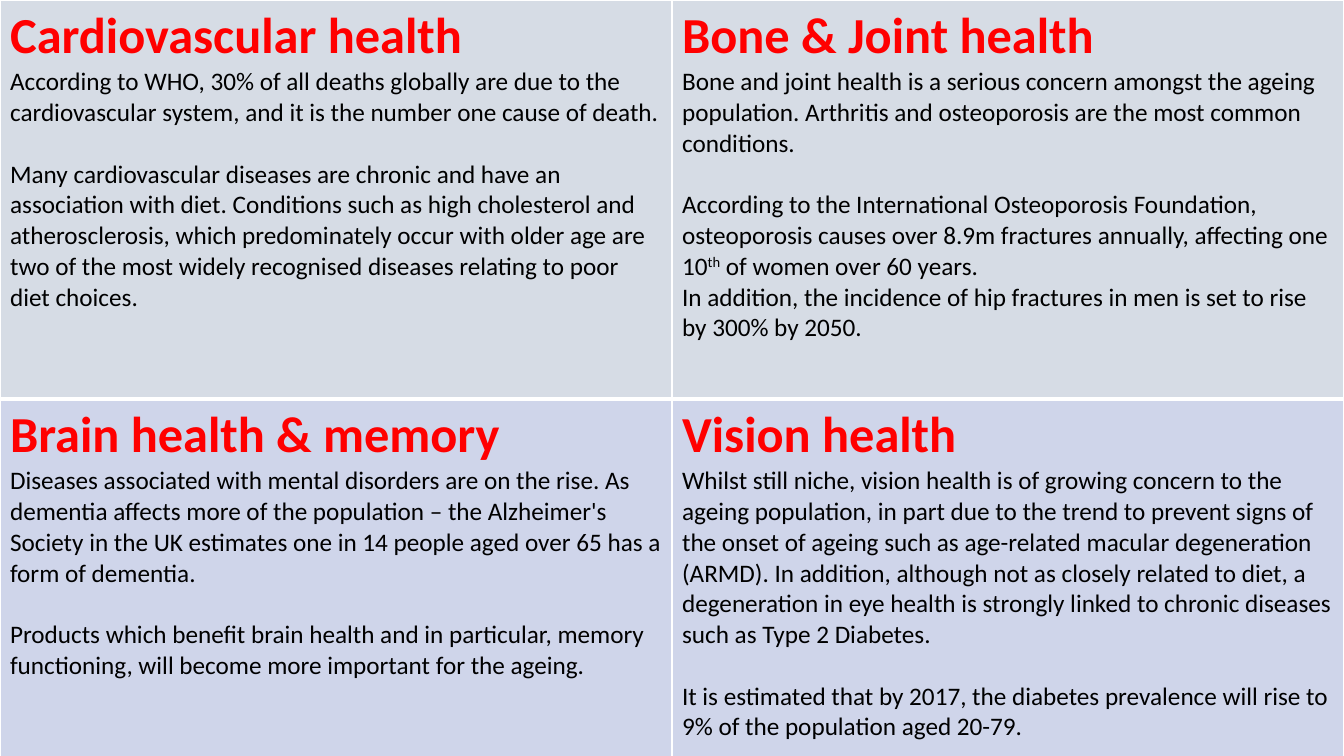
from pptx import Presentation
from pptx.dml.color import RGBColor
from pptx.oxml import parse_xml
from pptx.oxml.ns import nsdecls
from pptx.util import Inches, Pt

RED = RGBColor(0xFF, 0x00, 0x00)
BLACK = RGBColor(0x00, 0x00, 0x00)
WHITE = RGBColor(0xFF, 0xFF, 0xFF)
GREY = RGBColor(0xD6, 0xDC, 0xE5)
BLUE = RGBColor(0xCF, 0xD5, 0xEA)
GAP = 22  # one line of body text, in points

# Each topic: heading, then (space before, text pieces) per paragraph
TOPICS = [
    [("Cardiovascular health", [
        (0, ["According to WHO, 30% of all deaths globally are due to the "
             "cardiovascular system, and it is the number one cause of death."]),
        (GAP, ["Many cardiovascular diseases are chronic and have an association "
               "with diet. Conditions such as high cholesterol and "
               "atherosclerosis, which predominately occur with older age are "
               "two of the most widely recognised diseases relating to poor "
               "diet choices."])]),
     ("Bone & Joint health", [
         (0, ["Bone and joint health is a serious concern amongst the ageing "
              "population. Arthritis and osteoporosis are the most common "
              "conditions."]),
         (GAP, ["According to the International Osteoporosis Foundation, "
                "osteoporosis causes over 8.9m fractures annually, affecting "
                "one 10", "th", " of women over 60 years."]),
         (0, ["In addition, the incidence of hip fractures in men is set to "
              "rise by 300% by 2050."])])],
    [("Brain health & memory", [
        (0, ["Diseases associated with mental disorders are on the rise. As "
             "dementia affects more of the population – the Alzheimer's "
             "Society in the UK estimates one in 14 people aged over 65 has a "
             "form of dementia."]),
        (GAP, ["Products which benefit brain health and in particular, memory "
               "functioning, will become more important for the ageing."])]),
     ("Vision health", [
         (0, ["Whilst still niche, vision health is of growing concern to the "
              "ageing population, in part due to the trend to prevent signs of "
              "the onset of ageing such as age-related macular degeneration "
              "(ARMD). In addition, although not as closely related to diet, a "
              "degeneration in eye health is strongly linked to chronic "
              "diseases such as Type 2 Diabetes."]),
         (GAP, ["It is estimated that by 2017, the diabetes prevalence will "
                "rise to 9% of the population aged 20-79."])])],
]


def write(para, text, size=18, color=BLACK, bold=False, base=0):
    run = para.add_run()
    run.text = text
    font = run.font
    font.name, font.size, font.bold = "Calibri", Pt(size), bold
    font.color.rgb = color
    if base:
        font._element.set("baseline", str(base * 1000))


def edge(cell, widths):
    """Draw white borders; widths are left, right, top, bottom in points."""
    for spot, (side, width) in enumerate(zip("LRTB", widths)):
        line = parse_xml(
            f'<a:ln{side} {nsdecls("a")} w="{Pt(width)}"><a:solidFill>'
            f'<a:srgbClr val="{WHITE}"/></a:solidFill></a:ln{side}>')
        cell._tc.get_or_add_tcPr().insert(spot, line)


# Slide
prs = Presentation()
prs.slide_width, prs.slide_height = Inches(13.33), Inches(7.5)
slide = prs.slides.add_slide(prs.slide_layouts[6])

# Table: two equal columns across the slide
heights = [Inches(3.96), Inches(4.28)]
table = slide.shapes.add_table(2, 2, 0, 0, prs.slide_width, sum(heights)).table
fills = [GREY, BLUE]
edges = [(1, 1, 1, 3), (1, 1, 3, 1)]

# One topic in each cell
for r, topics in enumerate(TOPICS):
    table.rows[r].height = heights[r]
    for c, (head, body) in enumerate(topics):
        cell = table.cell(r, c)
        cell.fill.solid()
        cell.fill.fore_color.rgb = fills[r]
        edge(cell, edges[r])
        frame = cell.text_frame
        write(frame.paragraphs[0], head, size=36, color=RED, bold=True)
        for space, parts in body:
            para = frame.add_paragraph()
            para.space_before = Pt(space)
            for part in parts:
                write(para, part, base=30 if part == "th" else 0)

prs.save("out.pptx")
